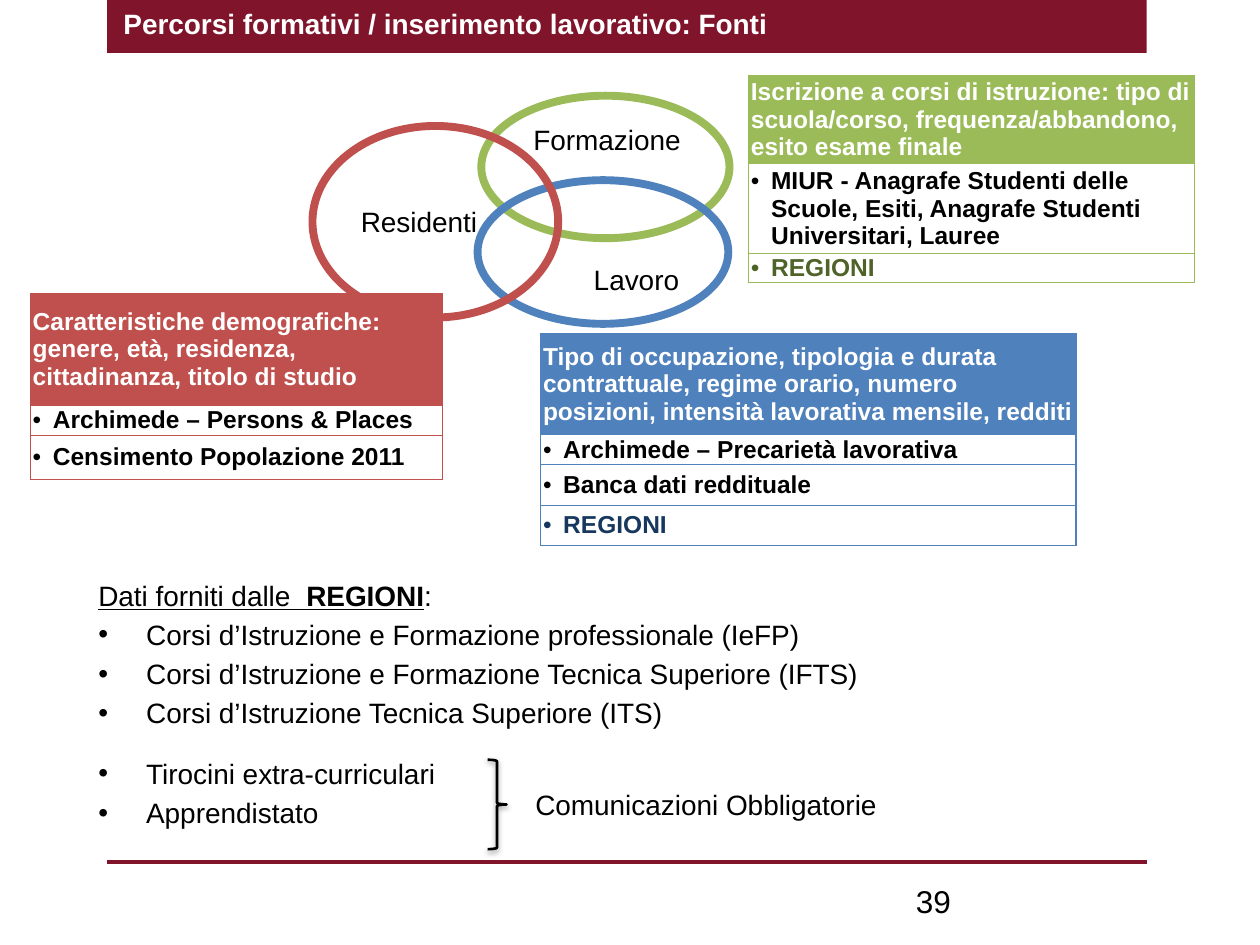
import pptx
import pptx.util
import pptx.dml.color
import pptx.enum.shapes
import pptx.enum.text
import pptx.oxml.ns
import lxml.etree
from dataclasses import dataclass


@dataclass(frozen=True)
class Theme:
    font: str = "Arial"
    wine: str = "7F142A"
    white: str = "FFFFFF"
    black: str = "000000"
    red: str = "C0504D"
    blue: str = "4F81BD"
    green: str = "9BBB59"
    navy: str = "17375E"
    olive: str = "4F6228"
    page: int = 18
    text: int = 16
    cell: int = 14


look = Theme()
kinds = pptx.enum.shapes.MSO_SHAPE
sides = pptx.enum.text.PP_ALIGN
spots = pptx.enum.text.MSO_ANCHOR
Pt = pptx.util.Pt
Inches = pptx.util.Inches

TITLE = "Percorsi formativi / inserimento lavorativo: Fonti"
RINGS = [
    ("Formazione", (38.2, 10.13, 19.7, 15.07), look.green, look.white, sides.RIGHT, spots.TOP),
    ("Lavoro", (37.9, 19.07, 19.9, 15.2), look.blue, None, sides.RIGHT, spots.BOTTOM),
    ("Residenti", (24.8, 13.33, 19.5, 20.27), look.red, None, sides.LEFT, spots.MIDDLE),
]
TABLES = [
    ((2.4, 31.07, 32.7), look.red, [
        ("Caratteristiche demografiche: genere, età, residenza, cittadinanza, titolo di studio", 11.8, look.white),
        ("Archimede – Persons & Places", 3.2, look.black),
        ("Censimento Popolazione 2011", 4.67, look.black),
    ]),
    ((42.9, 35.33, 42.5), look.blue, [
        ("Tipo di occupazione, tipologia e durata contrattuale, regime orario, "
         "numero posizioni, intensità lavorativa mensile, redditi", 10.67, look.white),
        ("Archimede – Precarietà lavorativa", 3.2, look.black),
        ("Banca dati reddituale", 4.27, look.black),
        ("REGIONI", 4.27, look.navy),
    ]),
    ((59.4, 8, 35.4), look.green, [
        ("Iscrizione a corsi di istruzione: tipo di scuola/corso, "
         "frequenza/abbandono, esito esame finale", 9.33, look.white),
        ("MIUR - Anagrafe Studenti delle Scuole, Esiti, "
         "Anagrafe Studenti Universitari, Lauree", 9.47, look.black),
        ("REGIONI", 3.07, look.olive),
    ]),
]
LEAD = [("Dati forniti dalle  ", False, True), ("REGIONI", True, True), (":", False, False)]
ITEMS = [
    ("Corsi d’Istruzione e Formazione professionale (IeFP)", 3.2),
    ("Corsi d’Istruzione e Formazione Tecnica Superiore (IFTS)", 3.2),
    ("Corsi d’Istruzione Tecnica Superiore (ITS)", 3.2),
    ("Tirocini extra-curriculari", 15.5),
    ("Apprendistato", 3.2),
]

deck = pptx.Presentation()
deck.slide_width, deck.slide_height = Inches(10), Inches(7.5)
page = deck.slides.add_slide(deck.slide_layouts[1])
shapes = page.shapes


def wide(share):
    return round(deck.slide_width * share / 100)


def high(share):
    return round(deck.slide_height * share / 100)


def area(box):
    x, y, w, h = box
    return wide(x), high(y), wide(w), high(h)


def place(shape, box):
    shape.left, shape.top, shape.width, shape.height = area(box)


def rgb(code):
    return pptx.dml.color.RGBColor.from_string(code)


def node(parent, tag, **attrs):
    return lxml.etree.SubElement(parent, pptx.oxml.ns.qn(tag), attrs)


def write(para, text, size=look.text, color=look.black, bold=False, under=False):
    run = para.add_run()
    run.text = text
    font = run.font
    font.name, font.size, font.bold, font.underline = look.font, Pt(size), bold, under
    font.color.rgb = rgb(color)


def bullet(para, inset):
    props = para._p.get_or_add_pPr()
    props.set("marL", str(Inches(inset)))
    props.set("indent", str(-Inches(inset)))
    node(props, "a:buFont", typeface=look.font)
    node(props, "a:buChar", char="•")


def paint(shape, fill, line, width):
    shape.shadow.inherit = False
    if fill:
        shape.fill.solid()
        shape.fill.fore_color.rgb = rgb(fill)
    else:
        shape.fill.background()
    if line:
        shape.line.color.rgb = rgb(line)
        shape.line.width = Pt(width)
    else:
        shape.line.fill.background()


def border(cell, color):
    props = cell._tc.get_or_add_tcPr()
    for spot, tag in enumerate(("a:lnL", "a:lnR", "a:lnT", "a:lnB")):
        line = node(props, tag, w=str(Pt(0.75)))
        node(node(line, "a:solidFill"), "a:srgbClr", val=color)
        props.insert(spot, line)


def grid(spot, color, rows):
    x, y, w = spot
    total = sum(share for _, share, _ in rows)
    table = shapes.add_table(len(rows), 1, *area((x, y, w, total))).table
    table.horz_banding = False
    for index, (text, share, ink) in enumerate(rows):
        table.rows[index].height = high(share)
        cell = table.cell(index, 0)
        cell.vertical_anchor = spots.MIDDLE
        cell.margin_left = cell.margin_right = Inches(0.02)
        cell.margin_top = cell.margin_bottom = 0
        cell.fill.solid()
        cell.fill.fore_color.rgb = rgb(look.white if index else color)
        border(cell, color)
        para = cell.text_frame.paragraphs[0]
        if index:
            bullet(para, 0.16)
        write(para, text, look.cell, ink, True)


def label(box, text, size, wrap):
    frame = shapes.add_textbox(*area(box)).text_frame
    frame.word_wrap = wrap
    write(frame.paragraphs[0], text, size)


title, body = shapes.title, page.placeholders[1]
bar = shapes.add_shape(kinds.RECTANGLE, *area((8.5, 0, 82.5, 5.6)))
paint(bar, look.wine, None, 0)
title._element.addprevious(bar._element)
place(title, (8.8, 0, 83.3, 4.93))
title.text_frame.vertical_anchor = spots.MIDDLE
head = title.text_frame.paragraphs[0]
head.alignment = sides.LEFT
write(head, TITLE, color=look.white, bold=True)

x, y, w, _ = area((8.5, 91.2, 82.5, 0))
rule = shapes.add_connector(pptx.enum.shapes.MSO_CONNECTOR.STRAIGHT, x, y, x + w, y)
rule.line.color.rgb = rgb(look.wine)
rule.line.width = Pt(2)
node(rule._element.spPr, "a:effectLst")

for text, box, line, fill, side, anchor in RINGS:
    ring = shapes.add_shape(kinds.OVAL, *area(box))
    paint(ring, fill, line, 4.5)
    ring.text_frame.word_wrap = True
    ring.text_frame.vertical_anchor = anchor
    para = ring.text_frame.paragraphs[0]
    para.alignment = side
    write(para, text)

for spot, color, rows in TABLES:
    grid(spot, color, rows)

place(body, (6.8, 60.53, 85.6, 30.4))
frame = body.text_frame
lead = frame.paragraphs[0]
lead.space_before = Pt(0)
props = lead._p.get_or_add_pPr()
props.set("marL", "0")
props.set("indent", "0")
node(props, "a:buNone")
for text, bold, under in LEAD:
    write(lead, text, bold=bold, under=under)
for text, gap in ITEMS:
    para = frame.add_paragraph()
    bullet(para, 0.38)
    para.space_before = Pt(gap)
    write(para, text)

brace = shapes.add_shape(kinds.RIGHT_BRACE, *area((38.7, 80.4, 1.5, 9.47)))
paint(brace, None, look.black, 1.5)
glow = node(brace._element.spPr.find(pptx.oxml.ns.qn("a:effectLst")), "a:outerShdw",
            blurRad=str(Pt(3.1)), dist=str(Pt(1.6)), dir="5400000", rotWithShape="0")
node(node(glow, "a:srgbClr", val=look.black), "a:alpha", val="38000")
label((41.5, 82.67, 29.4, 4.93), "Comunicazioni Obbligatorie", look.text, False)
label((71.7, 92.67, 23.3, 5.33), "39", look.page, True)

deck.save("out.pptx")
